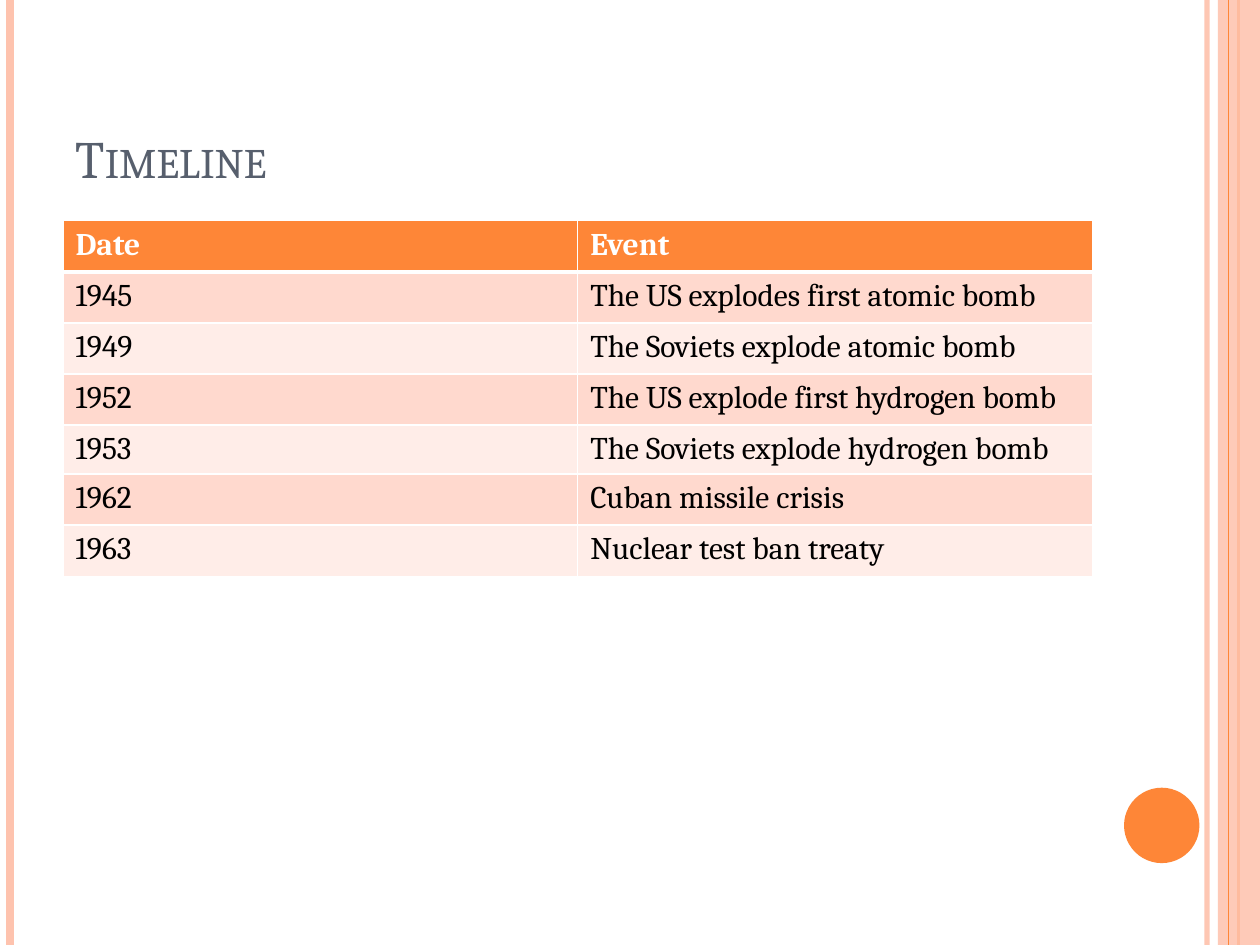
from lxml import etree
from pptx import Presentation
from pptx import util as u
from pptx.dml import color
from pptx.enum import shapes, text
from pptx.oxml import ns

COLORS = {
    "orange": "FE8637",
    "peach": "FEC3AE",
    "slate": "575F6D",
    "white": "FFFFFF",
    "black": "000000",
    "band_dark": "FFD9CE",
    "band_light": "FFEDE8",
}

EVENTS = [
    ("Date", "Event"),
    ("1945", "The US explodes first atomic bomb"),
    ("1949", "The Soviets explode atomic bomb"),
    ("1952", "The US explode first hydrogen bomb"),
    ("1953", "The Soviets explode hydrogen bomb"),
    ("1962", "Cuban missile crisis"),
    ("1963", "Nuclear test ban treaty"),
]
ROW_HEIGHTS = [1.03] * 4 + [0.66] + [1.03] * 2
SLIDE_HEIGHT = 19.05


def rgb(name):
    return color.RGBColor.from_string(COLORS[name])


def add_child(parent, tag, **attributes):
    return etree.SubElement(parent, ns.qn(tag), attributes)


class SlideBuilder:
    font = "Cambria"

    def __init__(self, slide):
        self.slide = slide

    def format_text(self, paragraph, color_name, **values):
        for name, value in {"name": self.font, **values}.items():
            setattr(paragraph.font, name, value)
        paragraph.font.color.rgb = rgb(color_name)

    def set_alpha(self, element, percent):
        for color_element in element.iter(ns.qn("a:srgbClr")):
            add_child(color_element, "a:alpha", val=str(percent * 1000))

    def stripe(self, left, color_name, width, alpha=100):
        line = self.slide.shapes.add_connector(
            shapes.MSO_CONNECTOR.STRAIGHT,
            u.Cm(left), 0, u.Cm(left), u.Cm(SLIDE_HEIGHT))
        line.line.color.rgb = rgb(color_name)
        line.line.width = u.Pt(width)
        properties = line._element.spPr
        if alpha < 100:
            self.set_alpha(properties, alpha)
        add_child(properties, "a:effectLst")

    def shape(self, kind, box, color_name, alpha=100):
        shape = self.slide.shapes.add_shape(kind, *map(u.Cm, box))
        shape.shadow.inherit = False
        shape.fill.solid()
        shape.fill.fore_color.rgb = rgb(color_name)
        shape.line.fill.background()
        if alpha < 100:
            self.set_alpha(shape._element.spPr, alpha)

    def title(self, words, box):
        title = self.slide.shapes.title
        for name, value in zip(("left", "top", "width", "height"), box):
            setattr(title, name, u.Cm(value))
        title.text_frame.text = words
        title.text_frame.vertical_anchor = text.MSO_ANCHOR.BOTTOM
        paragraph = title.text_frame.paragraphs[0]
        paragraph.alignment = text.PP_ALIGN.LEFT
        run = paragraph.runs[0]
        self.format_text(run, "slate", size=u.Pt(30))
        run._r.get_or_add_rPr().set("cap", "small")

    def border(self, cell, side, width):
        line = add_child(cell._tc.get_or_add_tcPr(), f"a:ln{side}",
                         w=str(u.Pt(width)))
        fill = add_child(line, "a:solidFill")
        add_child(fill, "a:srgbClr", val=COLORS["white"])

    def cell(self, cell, words, row):
        header = row == 0
        widths = {"L": 1, "R": 1, "T": 3 if row == 1 else 1,
                  "B": 3 if header else 1}
        for side, width in widths.items():
            self.border(cell, side, width)
        band = "band_dark" if row % 2 else "band_light"
        cell.fill.solid()
        cell.fill.fore_color.rgb = rgb("orange" if header else band)
        cell.text = words
        self.format_text(cell.text_frame.paragraphs[0].runs[0],
                         "white" if header else "black",
                         size=u.Pt(18), bold=header)

    def table(self, rows, heights, box):
        frame = self.slide.shapes.add_table(
            len(rows), len(rows[0]), *map(u.Cm, box))
        for row, (values, height) in enumerate(zip(rows, heights)):
            frame.table.rows[row].height = u.Cm(height)
            for column, words in enumerate(values):
                self.cell(frame.table.cell(row, column), words, row)


def main():
    presentation = Presentation()
    presentation.slide_width = u.Cm(25.4)
    presentation.slide_height = u.Cm(SLIDE_HEIGHT)
    layout = presentation.slide_layouts.get_by_name("Title Only")
    builder = SlideBuilder(presentation.slides.add_slide(layout))

    builder.stripe(24.33, "peach", 3, alpha=93)
    builder.stripe(0.21, "peach", 4.5)
    builder.stripe(24.97, "orange", 1.5)
    builder.shape(shapes.MSO_SHAPE.RECTANGLE,
                  (24.55, 0, 0.85, SLIDE_HEIGHT), "peach", alpha=87)
    builder.stripe(24.76, "orange", 0.75)
    builder.shape(shapes.MSO_SHAPE.OVAL, (22.66, 15.88, 1.52, 1.52), "orange")
    builder.title("Timeline", (1.27, 0.76, 20.75, 3.18))
    builder.table(EVENTS, ROW_HEIGHTS, (1.27, 4.45, 20.75, sum(ROW_HEIGHTS)))

    presentation.save("out.pptx")


if __name__ == "__main__":
    main()
